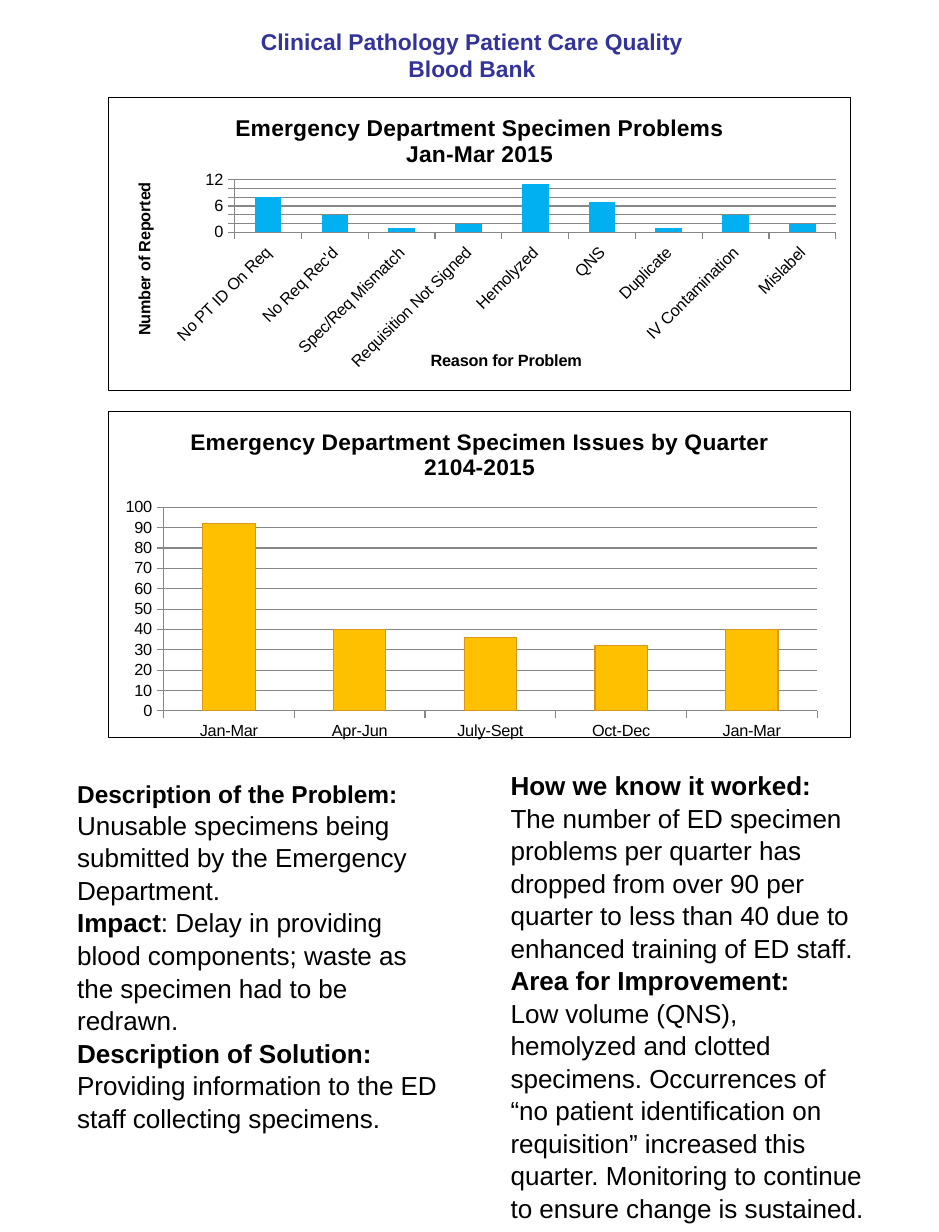
import pptx
import pptx.chart.data
import pptx.dml.color
import pptx.enum.chart
import pptx.enum.text
import pptx.oxml
import pptx.oxml.ns
import pptx.util

Cm, Pt, qn = pptx.util.Cm, pptx.util.Pt, pptx.oxml.ns.qn
LEFT, WIDE = 2.34, 16.08
GRID = "878787"


def tint(code):
    return pptx.dml.color.RGBColor.from_string(code)


def write(par, text, size=16, bold=False, color="000000"):
    """Add text to a paragraph; a newline becomes a line break."""
    for num, line in enumerate(text.split("\n")):
        if num:
            par.add_line_break()
        run = par.add_run()
        run.text = line
        font = run.font
        font.name, font.size, font.bold = "Arial", Pt(size), bold
        font.color.rgb = tint(color)


def stack(frame, lines, **form):
    """Write each line as a paragraph of its own."""
    for num, line in enumerate(lines):
        write(frame.add_paragraph() if num else frame.paragraphs[0], line, **form)


def place(node, index, **spots):
    """Give a title or plot area a manual layout, in fractions of the chart."""
    old = node.find(qn("c:layout"))
    if old is not None:
        node.remove(old)
    modes = "".join(f'<c:{key}Mode val="edge"/>' for key in ("x", "y"))
    inner = '<c:layoutTarget val="inner"/>' if "w" in spots else ""
    sizes = "".join(f'<c:{key} val="{val}"/>' for key, val in spots.items())
    node.insert(index, pptx.oxml.parse_xml(
        f'<c:layout {pptx.oxml.ns.nsdecls("c")}><c:manualLayout>'
        f'{inner}{modes}{sizes}</c:manualLayout></c:layout>'))


def frame_chart(chart, width):
    """Draw a black border round the chart."""
    chart.element.find(qn("c:chart")).addnext(pptx.oxml.parse_xml(
        f'<c:spPr {pptx.oxml.ns.nsdecls("c", "a")}><a:noFill/>'
        f'<a:ln w="{Pt(width)}"><a:solidFill><a:srgbClr val="000000"/>'
        '</a:solidFill></a:ln></c:spPr>'))


def bars(slide, box, title, cats, vals, fill, top, step, plot, border):
    data = pptx.chart.data.CategoryChartData()
    data.categories = cats
    data.add_series("Series 1", vals)
    chart = slide.shapes.add_chart(
        pptx.enum.chart.XL_CHART_TYPE.COLUMN_CLUSTERED,
        *map(Cm, box), data).chart
    chart.font.name, chart.font.size = "Arial", Pt(10)
    chart.font.color.rgb = tint("000000")
    chart.has_legend = False
    chart.has_title = True
    stack(chart.chart_title.text_frame, title, size=14, bold=True)
    chart.chart_title.include_in_layout = False

    group = chart.plots[0]
    group.gap_width, group.vary_by_categories = 150, False
    look = group.series[0].format
    look.fill.solid()
    look.fill.fore_color.rgb = tint(fill)

    for axis in (chart.category_axis, chart.value_axis):
        axis.major_tick_mark = pptx.enum.chart.XL_TICK_MARK.OUTSIDE
        axis.format.line.color.rgb = tint(GRID)
    axis.minimum_scale, axis.maximum_scale = 0, top
    axis.major_unit = step
    axis.has_major_gridlines = True
    axis.major_gridlines.format.line.color.rgb = tint(GRID)

    place(chart.element.find(".//" + qn("c:plotArea")), 0, **plot)
    frame_chart(chart, border)
    return chart


def problems(slide, box):
    chart = bars(
        slide, box,
        ["Emergency Department Specimen Problems", "Jan-Mar 2015"],
        ["No PT ID On Req", "No Req Rec'd", "Spec/Req Mismatch",
         "Requisition Not Signed", "Hemolyzed", "QNS", "Duplicate",
         "IV Contamination", "Mislabel"],
        [8, 4, 1, 2, 11, 7, 1, 4, 2], "00B0F0", 12, 2,
        {"x": 0.17, "y": 0.28, "w": 0.81, "h": 0.18}, 0.5)
    names = ((chart.category_axis, "c:catAx", "Reason for Problem", 0.43, 0.85),
             (chart.value_axis, "c:valAx", "Number of Reported", 0.03, 0.28))
    for axis, tag, text, x, y in names:
        stack(axis.axis_title.text_frame, [text], size=10, bold=True)
        node = chart.element.find(".//" + qn(tag))
        place(node.find(qn("c:title")), 1, x=x, y=y)
    chart.value_axis.axis_title.text_frame
    body = node.find(qn("c:title")).find(".//" + qn("a:bodyPr"))
    body.set("rot", "-5400000")
    body.set("vert", "horz")
    chart.category_axis.tick_labels.font.size = Pt(10)
    labels = chart.element.find(".//" + qn("c:catAx")).find(qn("c:txPr"))
    labels.find(qn("a:bodyPr")).set("rot", "-2700000")


def quarters(slide, box):
    chart = bars(
        slide, box,
        ["Emergency Department Specimen Issues by Quarter", "2104-2015"],
        ["Jan-Mar", "Apr-Jun", "July-Sept", "Oct-Dec", "Jan-Mar"],
        [92, 40, 36, 32, 40], "FFC000", 100, 10,
        {"x": 0.074, "y": 0.295, "w": 0.881, "h": 0.624}, 0.75)
    line = chart.plots[0].series[0].format.line
    line.color.rgb, line.width = tint("D9961D"), Pt(0.75)


def column(slide, box, rows):
    """Place a text column; each row is a paragraph of (text, format) runs."""
    frame = slide.shapes.add_textbox(*map(Cm, box)).text_frame
    frame.word_wrap = True
    frame.auto_size = pptx.enum.text.MSO_AUTO_SIZE.SHAPE_TO_FIT_TEXT
    for num, row in enumerate(rows):
        par = frame.add_paragraph() if num else frame.paragraphs[0]
        par.line_spacing = 1.04
        for text, form in row:
            write(par, text, **form)


def header(slide, box):
    title = slide.shapes.title
    title.left, title.top, title.width, title.height = map(Cm, box)
    frame = title.text_frame
    frame.word_wrap = True
    frame.auto_size = pptx.enum.text.MSO_AUTO_SIZE.NONE
    frame.vertical_anchor = pptx.enum.text.MSO_ANCHOR.MIDDLE
    par = frame.paragraphs[0]
    par.alignment = pptx.enum.text.PP_ALIGN.CENTER
    write(par, "Clinical Pathology Patient Care Quality\nBlood Bank",
          size=14, bold=True, color="333399")


def main():
    deck = pptx.Presentation()
    deck.slide_width, deck.slide_height = Cm(20.32), Cm(26.67)
    slide = deck.slides.add_slide(deck.slide_layouts[5])
    bold, plain = {"bold": True}, {}

    header(slide, (1.07, 0.2, 18.29, 1.98))
    quarters(slide, (LEFT, 8.89, WIDE, 7.14))
    column(slide, (1.42, 16.71, 8.33, 7.75), [
        [("Description of the Problem:", {"bold": True, "size": 15})],
        [("Unusable specimens being submitted by the Emergency Department.",
          plain)],
        [("Impact", bold),
         (": Delay in providing blood components; waste as the specimen "
          "had to be redrawn.", plain)],
        [("Description of Solution:", bold)],
        [("Providing information to the ED staff collecting specimens.",
          plain)]])
    column(slide, (10.8, 16.51, 8.28, 9.83), [
        [("How we know it worked:", bold)],
        [("The number of ED specimen problems per quarter has dropped from "
          "over 90 per quarter to less than 40 due to enhanced training of "
          "ED staff.", plain)],
        [("Area for Improvement:", bold)],
        [("Low volume (QNS), hemolyzed and clotted specimens. Occurrences of "
          "“no patient identification on requisition” increased this "
          "quarter. Monitoring to continue to ensure change is sustained.",
          plain)]])
    problems(slide, (LEFT, 2.11, WIDE, 6.35))
    deck.save("out.pptx")


if __name__ == "__main__":
    main()
